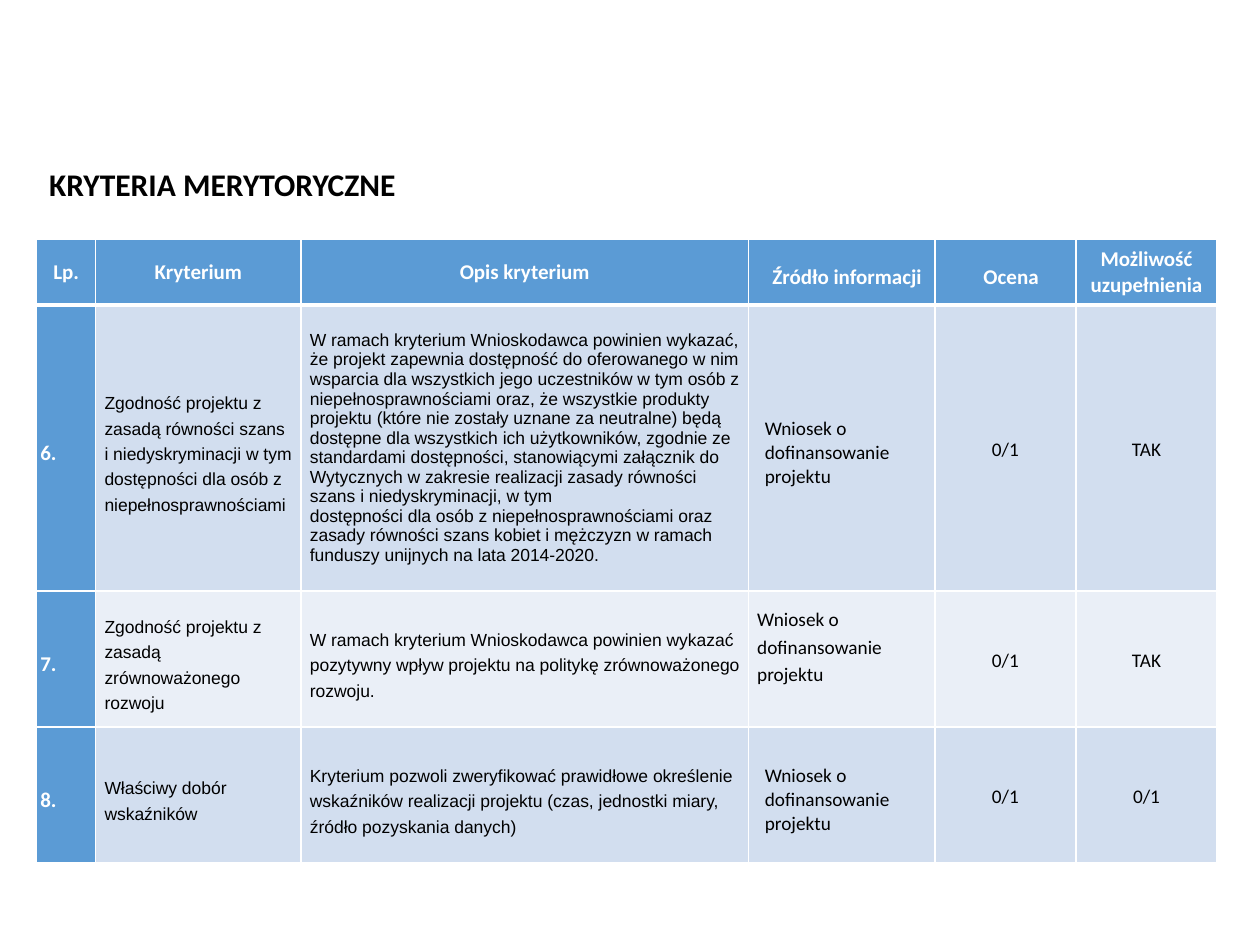
from dataclasses import dataclass, replace

from lxml import etree
from pptx import Presentation
from pptx.dml.color import RGBColor
from pptx.enum.text import MSO_ANCHOR, MSO_AUTO_SIZE, PP_ALIGN
from pptx.oxml.ns import qn
from pptx.util import Inches, Pt

LEFT, CENTER, JUSTIFY = PP_ALIGN.LEFT, PP_ALIGN.CENTER, PP_ALIGN.JUSTIFY
MIDDLE = MSO_ANCHOR.MIDDLE

COLORS = {
    "black": "000000",
    "white": "FFFFFF",
    "header": "5B9BD5",
    "band_dark": "D2DEEF",
    "band_light": "EAEFF7",
}


@dataclass(frozen=True)
class CellStyle:
    """Text format of a cell; margins are left, top, right, bottom in inches."""
    size: int
    font: str = "Calibri"
    color: str = "black"
    bold: bool = False
    align: PP_ALIGN = LEFT
    spacing: float = 1.0
    margins: tuple[float, float, float, float] = (0.07, 0, 0.07, 0)


@dataclass(frozen=True)
class Criterion:
    number: str
    name: str
    description: tuple[str, ...]
    score: str
    completion: str
    band: str
    description_style: CellStyle
    source_style: CellStyle


HEADER = CellStyle(12, color="white", bold=True, align=CENTER,
                   margins=(0.1, 0.05, 0.1, 0.05))
HEADER_SOURCE = replace(HEADER, align=LEFT, spacing=1.15, margins=(0.19, 0.06, 0, 0))
HEADER_SCORE = replace(HEADER, spacing=1.15, margins=(0.09, 0.06, 0, 0))
NUMBER = replace(HEADER, align=JUSTIFY, spacing=1.15, margins=(0.03, 0.06, 0.03, 0))
DENSE = CellStyle(10, font="Arial")
LOOSE = replace(DENSE, spacing=1.3, margins=(0.07, 0.06, 0.07, 0))
SOURCE = CellStyle(11, margins=(0.13, 0.08, 0.07, 0))
SOURCE_RAISED = CellStyle(11, spacing=1.15, margins=(0.07, 0, 0.07, 0.21))
SCORE = CellStyle(11, align=CENTER, spacing=1.15)

SOURCE_TEXT = "Wniosek o dofinansowanie projektu"
COLUMN_WIDTHS = (0.47, 1.63, 3.55, 1.48, 1.12, 1.12)
ROW_HEIGHTS = (0.52, 2.27, 1.08, 1.08)

HEADINGS = (
    ("Lp.", HEADER),
    ("Kryterium", HEADER),
    ("Opis kryterium", HEADER),
    ("Źródło informacji", HEADER_SOURCE),
    ("Ocena", HEADER_SCORE),
    ("Możliwość uzupełnienia", HEADER),
)
CRITERIA = (
    Criterion(
        "6.",
        "Zgodność projektu z zasadą równości szans i niedyskryminacji w tym "
        "dostępności dla osób z niepełnosprawnościami",
        ("W ramach kryterium Wnioskodawca powinien wykazać, że projekt zapewnia "
         "dostępność do oferowanego w nim wsparcia dla wszystkich jego uczestników "
         "w tym osób z niepełnosprawnościami oraz, że wszystkie produkty projektu "
         "(które nie zostały uznane za neutralne) będą dostępne dla wszystkich ich "
         "użytkowników, zgodnie ze standardami dostępności, stanowiącymi załącznik "
         "do Wytycznych w zakresie realizacji zasady równości szans i "
         "niedyskryminacji, w tym",
         "dostępności dla osób z niepełnosprawnościami oraz zasady równości szans "
         "kobiet i mężczyzn w ramach funduszy unijnych na lata 2014-2020."),
        "0/1", "TAK", "band_dark", DENSE, SOURCE),
    Criterion(
        "7.",
        "Zgodność projektu z zasadą zrównoważonego rozwoju",
        ("W ramach kryterium Wnioskodawca powinien wykazać pozytywny wpływ projektu "
         "na politykę zrównoważonego rozwoju.",),
        "0/1", "TAK", "band_light", LOOSE, SOURCE_RAISED),
    Criterion(
        "8.",
        "Właściwy dobór wskaźników",
        ("Kryterium pozwoli zweryfikować prawidłowe określenie wskaźników realizacji "
         "projektu (czas, jednostki miary, źródło pozyskania danych)",),
        "0/1", "0/1", "band_dark", LOOSE, SOURCE),
)


def rgb(name: str) -> RGBColor:
    return RGBColor.from_string(COLORS[name])


def format_paragraph(p, style: CellStyle) -> None:
    p.alignment = style.align
    p.line_spacing = style.spacing
    p.font.size = Pt(style.size)
    p.font.name = style.font
    p.font.bold = style.bold
    p.font.color.rgb = rgb(style.color)


def add_borders(cell, bottom: float) -> None:
    """Draw white borders, 1 pt on all sides but the bottom."""
    props = cell._tc.get_or_add_tcPr()
    sides = (("a:lnL", 1), ("a:lnR", 1), ("a:lnT", 1), ("a:lnB", bottom))
    for i, (tag, width) in enumerate(sides):
        line = etree.Element(qn(tag), w=str(Pt(width)))
        fill = etree.SubElement(line, qn("a:solidFill"))
        etree.SubElement(fill, qn("a:srgbClr"), val=COLORS["white"])
        props.insert(i, line)


def fill_cell(cell, lines: tuple[str, ...], style: CellStyle, fill: str,
              bottom: float = 1) -> None:
    cell.fill.solid()
    cell.fill.fore_color.rgb = rgb(fill)
    cell.vertical_anchor = MIDDLE
    (cell.margin_left, cell.margin_top,
     cell.margin_right, cell.margin_bottom) = map(Inches, style.margins)
    tf = cell.text_frame
    tf.text = "\n".join(lines)
    for p in tf.paragraphs:
        format_paragraph(p, style)
    add_borders(cell, bottom)


def add_title(slide, text: str) -> None:
    sp = slide.shapes.title
    sp.left, sp.top, sp.width, sp.height = map(Inches, (0.29, 1.26, 3.15, 0.4))
    tf = sp.text_frame
    tf.text = text
    tf.word_wrap = False
    tf.auto_size = MSO_AUTO_SIZE.SHAPE_TO_FIT_TEXT
    tf.vertical_anchor = MIDDLE
    format_paragraph(tf.paragraphs[0], CellStyle(18, bold=True))


def add_criteria_table(slide) -> None:
    frame = slide.shapes.add_table(
        len(ROW_HEIGHTS), len(COLUMN_WIDTHS), Inches(0.29), Inches(1.9),
        Inches(sum(COLUMN_WIDTHS)), Inches(sum(ROW_HEIGHTS)))
    table = frame.table
    for column, width in zip(table.columns, COLUMN_WIDTHS):
        column.width = Inches(width)
    for row, height in zip(table.rows, ROW_HEIGHTS):
        row.height = Inches(height)

    for col, (text, style) in enumerate(HEADINGS):
        fill_cell(table.cell(0, col), (text,), style, "header", bottom=3)
    for row, c in enumerate(CRITERIA, start=1):
        contents = (
            ((c.number,), NUMBER, "header"),
            ((c.name,), LOOSE, c.band),
            (c.description, c.description_style, c.band),
            ((SOURCE_TEXT,), c.source_style, c.band),
            ((c.score,), SCORE, c.band),
            ((c.completion,), SCORE, c.band),
        )
        for col, (lines, style, fill) in enumerate(contents):
            fill_cell(table.cell(row, col), lines, style, fill)


def main() -> None:
    prs = Presentation()
    prs.slide_width, prs.slide_height = Inches(10), Inches(7.5)
    slide = prs.slides.add_slide(prs.slide_layouts.get_by_name("Title Only"))
    add_title(slide, "KRYTERIA MERYTORYCZNE")
    add_criteria_table(slide)
    prs.save("out.pptx")


if __name__ == "__main__":
    main()
